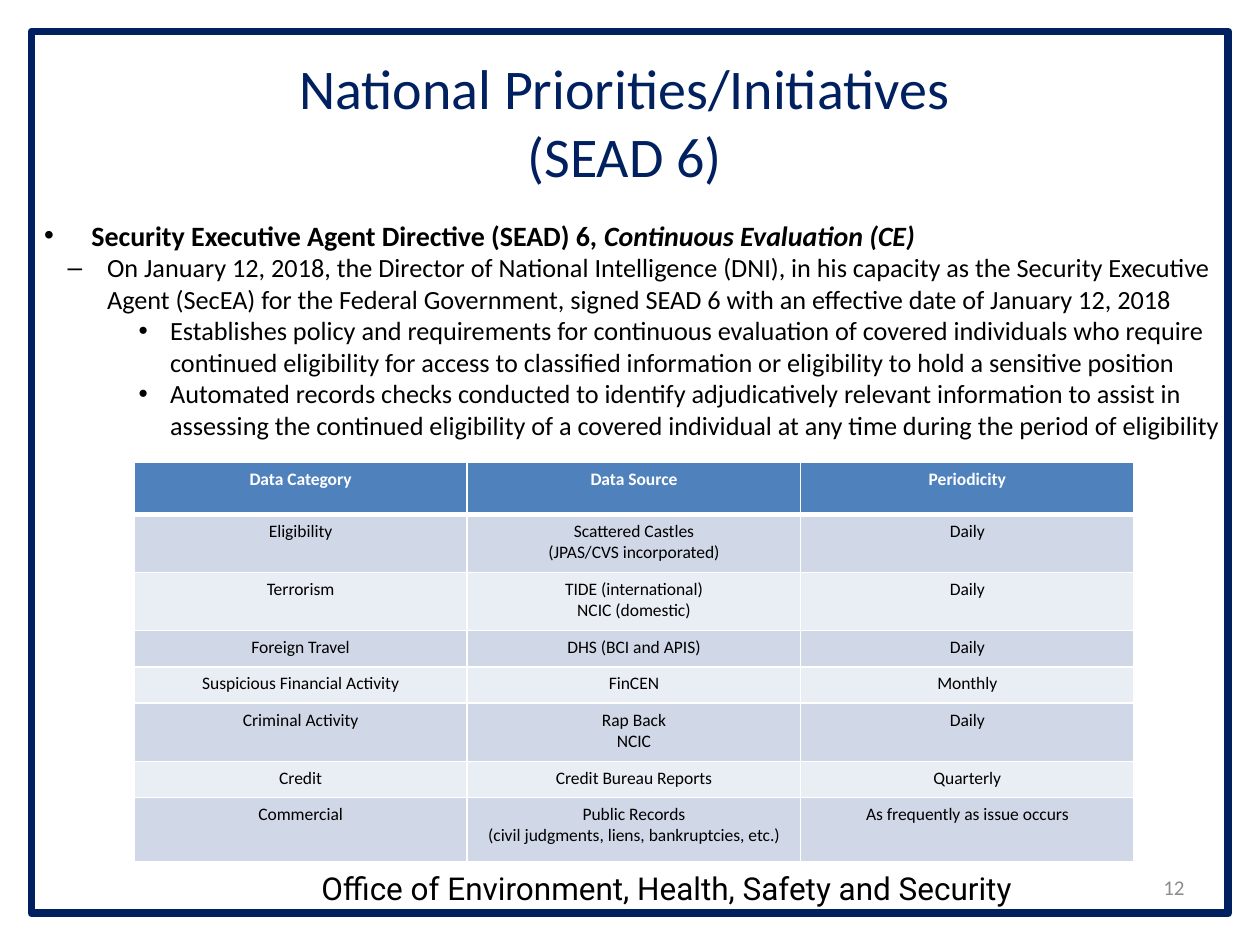
from dataclasses import dataclass

from lxml import etree
from pptx import Presentation
from pptx.dml.color import RGBColor
from pptx.enum import shapes, text
from pptx.oxml import ns
from pptx.util import Pt


@dataclass(frozen=True)
class Theme:
    navy: str = "002060"
    black: str = "000000"
    white: str = "FFFFFF"
    gray: str = "8C8C8C"
    header: str = "4F81BD"
    bands: tuple[str, str] = ("D0D8E8", "E9EDF4")
    font: str = "Calibri"
    footer_font: str = "Roboto"
    title_size: float = 32
    footer_size: float = 18
    lead_size: float = 16
    detail_size: float = 15
    number_size: float = 12
    table_size: float = 10


@dataclass(frozen=True)
class Box:
    left: float
    top: float
    width: float
    height: float

    def lengths(self) -> tuple[Pt, Pt, Pt, Pt]:
        return Pt(self.left), Pt(self.top), Pt(self.width), Pt(self.height)


@dataclass(frozen=True)
class Style:
    size: float
    color: str = Theme.black
    font: str = Theme.font
    bold: bool = False
    italic: bool = False


@dataclass(frozen=True)
class Bullet:
    level: int
    runs: tuple[tuple[str, Style], ...]


@dataclass(frozen=True)
class Check:
    category: str
    sources: tuple[str, ...]
    periodicity: str
    height: float


THEME = Theme()
LEAD = Style(THEME.lead_size, bold=True)
LEAD_ITALIC = Style(THEME.lead_size, bold=True, italic=True)
DETAIL = Style(THEME.detail_size)

# Marker, text margin and hanging indent for each outline level
LEVELS = (("•", 27, -27), ("–", 36, -22.5), ("•", 72, -18))

DIRECTIVE = (
    Bullet(0, (("Security Executive Agent Directive (SEAD) 6, ", LEAD),
               ("Continuous Evaluation (CE)", LEAD_ITALIC))),
    Bullet(1, (("On January 12, 2018, the Director of National Intelligence (DNI), in his "
                "capacity as the Security Executive Agent (SecEA) for the Federal Government, "
                "signed SEAD 6 with an effective date of January 12, 2018", DETAIL),)),
    Bullet(2, (("Establishes policy and requirements for continuous evaluation of covered "
                "individuals who require continued eligibility for access to classified "
                "information or eligibility to hold a sensitive position", DETAIL),)),
    Bullet(2, (("Automated records checks conducted to identify adjudicatively relevant "
                "information to assist in assessing the continued eligibility of a covered "
                "individual at any time during the period of eligibility", DETAIL),)),
)

ONE_LINE, TWO_LINES = 20.7, 33.3
HEADINGS = Check("Data Category", ("Data Source",), "Periodicity", 29.7)
CHECKS = (
    Check("Eligibility", ("Scattered Castles", "(JPAS/CVS incorporated)"), "Daily", TWO_LINES),
    Check("Terrorism", ("TIDE (international)", "NCIC (domestic)"), "Daily", TWO_LINES),
    Check("Foreign Travel", ("DHS (BCI and APIS)",), "Daily", ONE_LINE),
    Check("Suspicious Financial Activity", ("FinCEN",), "Monthly", ONE_LINE),
    Check("Criminal Activity", ("Rap Back", "NCIC"), "Daily", TWO_LINES),
    Check("Credit", ("Credit Bureau Reports",), "Quarterly", ONE_LINE),
    Check("Commercial", ("Public Records", "(civil judgments, liens, bankruptcies, etc.)"),
          "As frequently as issue occurs", 36.5),
)


def add_run(paragraph, words: str, style: Style) -> None:
    run = paragraph.add_run()
    run.text = words
    font = run.font
    font.name, font.size = style.font, Pt(style.size)
    font.bold, font.italic = style.bold, style.italic
    font.color.rgb = RGBColor.from_string(style.color)


def place(shape, box: Box) -> None:
    shape.left, shape.top, shape.width, shape.height = box.lengths()


def add_frame(slide, box: Box) -> None:
    frame = slide.shapes.add_shape(shapes.MSO_SHAPE.RECTANGLE, *box.lengths())
    frame.shadow.inherit = False
    frame.fill.background()
    frame.line.color.rgb = RGBColor.from_string(THEME.navy)
    frame.line.width = Pt(4.5)


def add_label(slide, box: Box, words: str, style: Style, align, anchor) -> None:
    frame = slide.shapes.add_textbox(*box.lengths()).text_frame
    frame.word_wrap = True
    frame.vertical_anchor = anchor
    frame.paragraphs[0].alignment = align
    add_run(frame.paragraphs[0], words, style)


def fill_title(title, box: Box, lines: tuple[str, ...]) -> None:
    place(title, box)
    frame = title.text_frame
    frame.auto_size = text.MSO_AUTO_SIZE.NONE
    frame.vertical_anchor = text.MSO_ANCHOR.MIDDLE
    paragraph = frame.paragraphs[0]
    paragraph.alignment = text.PP_ALIGN.CENTER
    for index, line in enumerate(lines):
        if index:
            paragraph.add_line_break()
        add_run(paragraph, line, Style(THEME.title_size, THEME.navy))


def fill_body(body, box: Box, bullets: tuple[Bullet, ...]) -> None:
    place(body, box)
    frame = body.text_frame
    frame.auto_size = text.MSO_AUTO_SIZE.NONE
    for index, bullet in enumerate(bullets):
        paragraph = frame.add_paragraph() if index else frame.paragraphs[0]
        paragraph.level = bullet.level
        paragraph.space_before = Pt(0)
        marker, margin, indent = LEVELS[bullet.level]
        properties = paragraph._p.get_or_add_pPr()
        properties.set("marL", str(Pt(margin)))
        properties.set("indent", str(Pt(indent)))
        etree.SubElement(properties, ns.qn("a:buFont"), typeface="Arial")
        etree.SubElement(properties, ns.qn("a:buChar"), char=marker)
        for words, style in bullet.runs:
            add_run(paragraph, words, style)


def set_borders(cell, top: float, bottom: float) -> None:
    properties = cell._tc.get_or_add_tcPr()
    for side, width in (("lnL", 1), ("lnR", 1), ("lnT", top), ("lnB", bottom)):
        line = etree.SubElement(properties, ns.qn(f"a:{side}"), w=str(Pt(width)))
        fill = etree.SubElement(line, ns.qn("a:solidFill"))
        etree.SubElement(fill, ns.qn("a:srgbClr"), val=THEME.white)


def add_checks_table(slide, box: Box, rows: tuple[Check, ...]) -> None:
    table = slide.shapes.add_table(len(rows), 3, *box.lengths()).table
    for column in table.columns:
        column.width = Pt(box.width / 3)
    for index, check in enumerate(rows):
        table.rows[index].height = Pt(check.height)
        is_header = index == 0
        fill = THEME.header if is_header else THEME.bands[(index - 1) % 2]
        style = Style(THEME.table_size, THEME.white if is_header else THEME.black, bold=is_header)
        entries = ((check.category,), check.sources, (check.periodicity,))
        for column, lines in enumerate(entries):
            cell = table.cell(index, column)
            set_borders(cell, top=3 if index == 1 else 1, bottom=3 if is_header else 1)
            cell.fill.solid()
            cell.fill.fore_color.rgb = RGBColor.from_string(fill)
            for number, line in enumerate(lines):
                frame = cell.text_frame
                paragraph = frame.add_paragraph() if number else frame.paragraphs[0]
                paragraph.alignment = text.PP_ALIGN.CENTER
                add_run(paragraph, line, style)


def main() -> None:
    deck = Presentation()
    deck.slide_width, deck.slide_height = Pt(720), Pt(540)
    slide = deck.slides.add_slide(deck.slide_layouts[1])
    add_frame(slide, Box(18, 18, 684, 504))
    add_label(slide, Box(162, 493.2, 438, 29), "Office of Environment, Health, Safety and Security",
              Style(THEME.footer_size, font=THEME.footer_font),
              text.PP_ALIGN.CENTER, text.MSO_ANCHOR.TOP)
    fill_title(slide.shapes.title, Box(18, 43.2, 678, 52),
               ("National Priorities/Initiatives", "(SEAD 6)"))
    fill_body(slide.placeholders[1], Box(18, 121, 696, 155), DIRECTIVE)
    add_checks_table(slide, Box(76.5, 264.2, 571.5, 228.2), (HEADINGS, *CHECKS))
    add_label(slide, Box(608.4, 492.5, 75.6, 28.8), "12", Style(THEME.number_size, THEME.gray),
              text.PP_ALIGN.RIGHT, text.MSO_ANCHOR.MIDDLE)
    deck.save("out.pptx")


if __name__ == "__main__":
    main()
